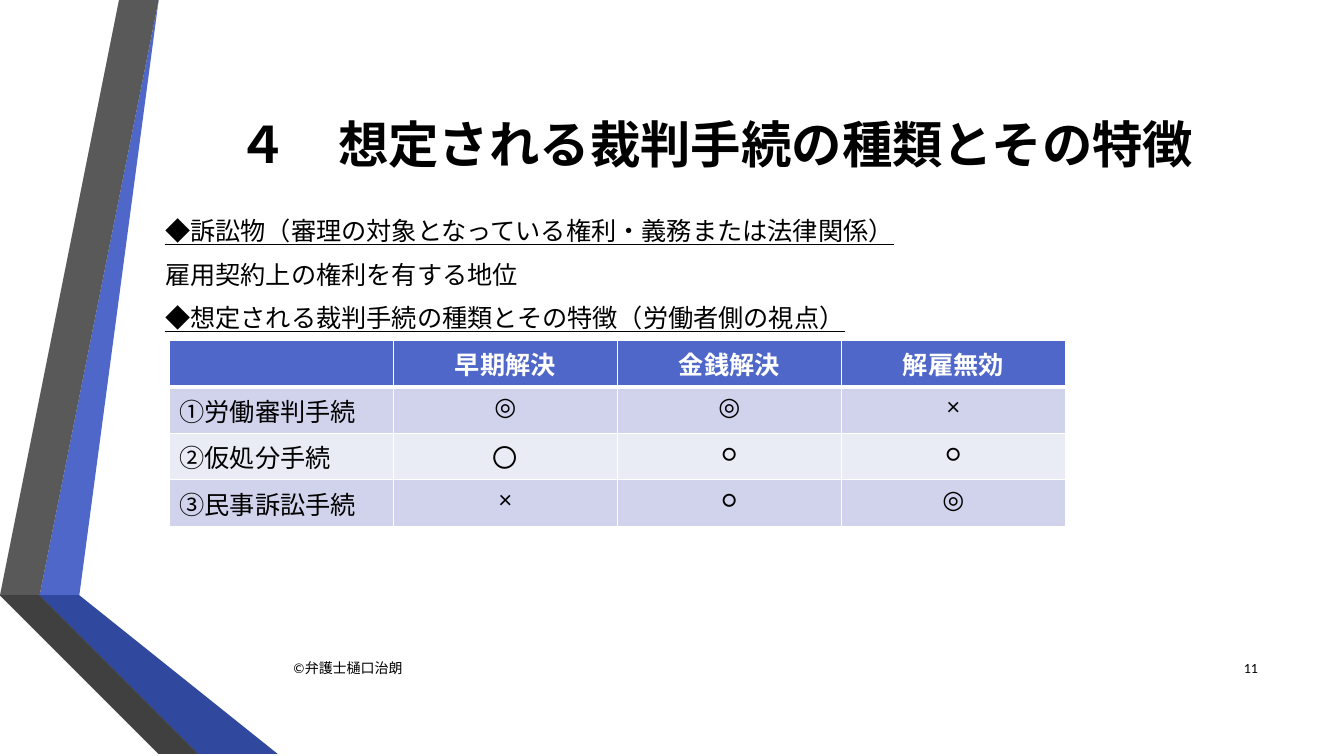
import lxml.etree
import pptx
import pptx.dml.color
import pptx.enum.lang
import pptx.enum.text
import pptx.oxml
import pptx.oxml.ns
import pptx.util

Cm, Pt = pptx.util.Cm, pptx.util.Pt
ALIGN = pptx.enum.text.PP_ALIGN
ANCHOR = pptx.enum.text.MSO_ANCHOR
GOTHIC, LATIN = "Noto Sans CJK JP", "Calibri"

# Ribbon pieces: fill and corner points in centimetres
RIBBONS = [
    ("4E67C8", [(1.27, 14.68), (1.96, 14.81), (4.39, 0), (3.68, 0)]),
    ("595959", [(3.53, 0), (2.82, 0), (0.41, 14.55), (1.12, 14.66)]),
    ("262626", [(0.41, 14.55), (3.68, 19.05), (3.84, 19.05)]),
    ("21306A", [(1.27, 14.71), (5.28, 19.05), (5.44, 19.05)]),
    ("31489F", [(1.27, 14.68), (5.44, 19.05), (7.19, 19.05), (1.96, 14.81)]),
    ("404040", [(5.13, 19.05), (1.12, 14.68), (0.41, 14.55), (3.84, 19.05)]),
]

# Text boxes: left, top, width, height, anchor, paragraph format, lines with font format
BODY = {"name": GOTHIC, "size": Pt(18)}
HEADING = {**BODY, "underline": True}
SMALL = {"name": LATIN, "size": Pt(10)}
TEXTS = [
    ((4.11, 1.17, 27.84, 4.88), ANCHOR.MIDDLE, {"alignment": ALIGN.CENTER},
     [("４　想定される裁判手続の種類とその特徴",
       {"name": GOTHIC, "size": Pt(36), "bold": True})]),
    ((3.91, 5.1, 27.84, 3.3), ANCHOR.TOP, {"line_spacing": Pt(31)},
     [("◆訴訟物（審理の対象となっている権利・義務または法律関係）", HEADING),
      ("雇用契約上の権利を有する地位", BODY),
      ("◆想定される裁判手続の種類とその特徴（労働者側の視点）", HEADING)]),
    ((7.14, 16.33, 19.69, 1.02), ANCHOR.MIDDLE, {}, [("©弁護士樋口治朗", SMALL)]),
    ((30.43, 16.31, 1.52, 1.02), ANCHOR.MIDDLE, {"alignment": ALIGN.RIGHT},
     [("11", SMALL)]),
]

TABLE = [
    ["", "早期解決", "金銭解決", "解雇無効"],
    ["①労働審判手続", "◎", "◎", "×"],
    ["➁仮処分手続", "〇", "○", "○"],
    ["③民事訴訟手続", "×", "○", "◎"],
]
TABLE_LEFT, TABLE_TOP = 4.27, 8.58
COLUMN_WIDTH, ROW_HEIGHT = 5.645, 1.17
HEADER_FILL, BAND_FILLS = "4E67C8", ["E9EBF5", "D0D3EB"]


def rgb(value):
    return pptx.dml.color.RGBColor.from_string(value)


def set_all(target, values):
    for name, value in values.items():
        setattr(target, name, value)


def write(para, text, font, color="000000"):
    """Add one run, with the Japanese face set beside the Latin one."""
    span = para.add_run()
    span.text = text
    set_all(span.font, {**font, "language_id": pptx.enum.lang.MSO_LANGUAGE_ID.JAPANESE})
    span.font.color.rgb = rgb(color)
    east_asian = pptx.oxml.parse_xml(
        f'<a:ea {pptx.oxml.ns.nsdecls("a")} typeface="{GOTHIC}"/>')
    span.font._element.find(pptx.oxml.ns.qn("a:latin")).addnext(east_asian)


def add_ribbon(page, fill, points):
    start, *others = points
    builder = page.shapes.build_freeform(*start, scale=Cm(1))
    builder.add_line_segments(others, close=True)
    shape = builder.convert_to_shape()
    shape.shadow.inherit = False
    shape.fill.solid()
    shape.fill.fore_color.rgb = rgb(fill)
    shape.line.fill.background()


def add_text(page, place, anchor, layout, lines):
    box = page.shapes.add_textbox(*map(Cm, place))
    frame = box.text_frame
    set_all(frame, {"word_wrap": True, "vertical_anchor": anchor,
                    "margin_top": 0, "margin_bottom": 0})
    for index, (text, font) in enumerate(lines):
        para = frame.add_paragraph() if index else frame.paragraphs[0]
        set_all(para, layout)
        write(para, text, font)


def add_borders(cell, widths):
    properties = cell._tc.get_or_add_tcPr()
    for index, (side, width) in enumerate(widths.items()):
        border = pptx.oxml.parse_xml(
            f'<a:ln{side} {pptx.oxml.ns.nsdecls("a")} w="{Pt(width)}">'
            '<a:solidFill><a:srgbClr val="FFFFFF"/></a:solidFill>'
            f'</a:ln{side}>')
        properties.insert(index, border)


def add_table(page):
    rows, columns = len(TABLE), len(TABLE[0])
    table = page.shapes.add_table(
        rows, columns, Cm(TABLE_LEFT), Cm(TABLE_TOP),
        Cm(COLUMN_WIDTH * columns), Cm(ROW_HEIGHT * rows)).table
    for row, texts in enumerate(TABLE):
        header = row == 0
        for column, text in enumerate(texts):
            cell = table.cell(row, column)
            cell.fill.solid()
            cell.fill.fore_color.rgb = rgb(HEADER_FILL if header else BAND_FILLS[row % 2])
            add_borders(cell, {"L": 1, "R": 1, "T": 3 if row == 1 else 1,
                               "B": 3 if header else 1})
            para = cell.text_frame.paragraphs[0]
            para.alignment = ALIGN.CENTER if column else ALIGN.LEFT
            para.font.size = Pt(18)
            if text:
                font = {"name": LATIN if column else GOTHIC,
                        "size": Pt(18), "bold": header}
                write(para, text, font, "FFFFFF" if header else "000000")


def main():
    deck = pptx.Presentation()
    set_all(deck, {"slide_width": Cm(33.87), "slide_height": Cm(19.05)})
    page = deck.slides.add_slide(deck.slide_layouts[6])
    for fill, points in RIBBONS:
        add_ribbon(page, fill, points)
    for text in TEXTS:
        add_text(page, *text)
    add_table(page)
    deck.save("out.pptx")


if __name__ == "__main__":
    main()
